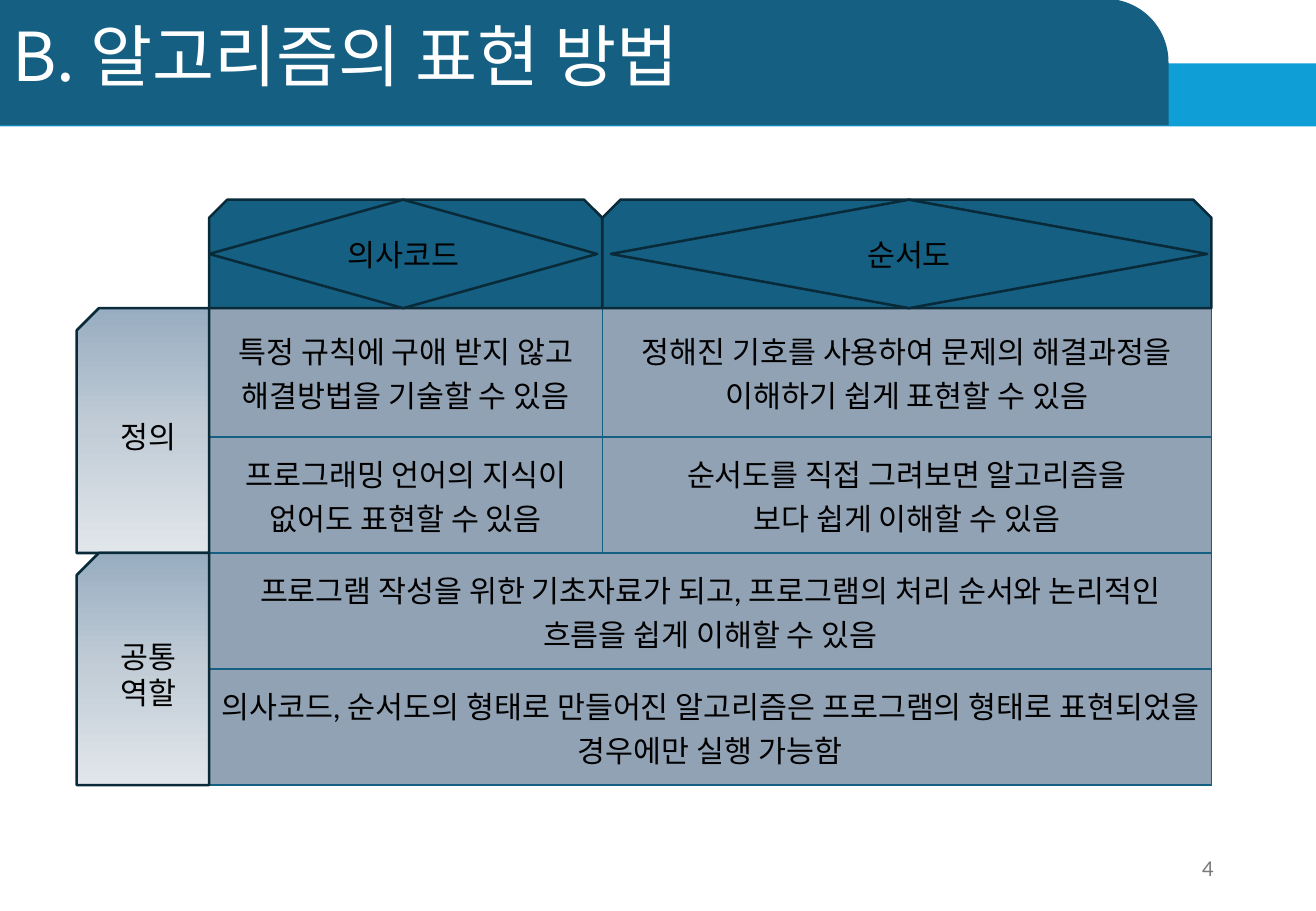
"""Build the slide comparing pseudocode and flowcharts."""
from copy import deepcopy
from pptx import Presentation
from pptx import oxml
from pptx.dml.color import RGBColor
from pptx.enum import shapes, text
from pptx.oxml import ns
from pptx.util import Pt

TITLE = "B. 알고리즘의 표현 방법"
PAGE = "4"
HEADS = [("의사코드", 0, 230), ("순서도", 5, 353.5)]
SIDES = [["정의"], ["공통", "역할"]]
ROWS = [
    [["특정 규칙에 구애 받지 않고 해결방법을 기술할 수 있음"],
     ["정해진 기호를 사용하여 문제의 해결과정을 이해하기 쉽게 표현할 수 있음"]],
    [["프로그래밍 언어의 지식이 없어도 표현할 수 있음"],
     ["순서도를 직접 그려보면 알고리즘을", "보다 쉽게 이해할 수 있음"]],
    [["프로그램 작성을 위한 기초자료가 되고, 프로그램의 처리 순서와 논리적인 흐름을 쉽게 이해할 수 있음"]],
    [["의사코드, 순서도의 형태로 만들어진 알고리즘은 프로그램의 형태로 표현되었을 경우에만 실행 가능함"]],
]
BLUE, SKY, EDGE, CELL = "156082", "0F9ED5", "092A39", "92A2B5"
GRADIENT = [(0, "98ADC1"), (0.5, "C2CDD7"), (1, "E1E6EB")]
KOREAN, LATIN = "Noto Sans CJK KR", "Lato"
WIDTH, HEIGHT = 780, 540
LEFT, TOP, HEAD_H, SIDE_W = 124, 182.7, 64.3, 78.5
COLS = [233, 361]
HEIGHTS = [76.3, 68.8, 68.8, 68.8]
SHAPE = shapes.MSO_SHAPE
ALIGN = text.PP_ALIGN


def rgb(value):
    return RGBColor.from_string(value)


def write(tf, lines, size=18, font=KOREAN, color="000000", align=ALIGN.CENTER):
    tf.word_wrap = True
    tf.vertical_anchor = text.MSO_ANCHOR.MIDDLE
    for i, line in enumerate(lines):
        p = tf.paragraphs[0] if i == 0 else tf.add_paragraph()
        p.alignment = align
        r = p.add_run()
        r.text = line
        for name, value in {"size": Pt(size), "name": font}.items():
            setattr(r.font, name, value)
        r.font.color.rgb = rgb(color)
        if font == KOREAN:
            ea = oxml.parse_xml(f'<a:ea {ns.nsdecls("a")} typeface="{font}"/>')
            r.font._element.append(ea)


def add(s, kind, box, fill=BLUE, line=None):
    sp = s.shapes.add_shape(kind, *map(Pt, box))
    sp.shadow.inherit = False
    sp.fill.solid()
    sp.fill.fore_color.rgb = rgb(fill)
    if line:
        sp.line.color.rgb = rgb(line)
        sp.line.width = Pt(1.5)
    else:
        sp.line.fill.background()
    return sp


def shade(sp):
    sp.fill.gradient()
    sp.fill.gradient_angle = 270
    first = sp.fill.gradient_stops[0]._gs
    first.addnext(deepcopy(first))
    for stop, (position, color) in zip(sp.fill.gradient_stops, GRADIENT):
        stop.position = position
        stop.color.rgb = rgb(color)


def style_cell(cell):
    tcPr = cell._tc.get_or_add_tcPr()
    for side in ("lnL", "lnR", "lnT", "lnB"):
        tcPr.append(oxml.parse_xml(
            f'<a:{side} {ns.nsdecls("a")} w="12700"><a:solidFill>'
            f'<a:srgbClr val="{BLUE}"/></a:solidFill></a:{side}>'))
    cell.fill.solid()
    cell.fill.fore_color.rgb = rgb(CELL)


def add_title(s):
    add(s, SHAPE.RECTANGLE, (0, 37.5, WIDTH, 37.5), SKY)
    add(s, SHAPE.ROUND_1_RECTANGLE, (0, -0.7, 692.6, 75)).adjustments[0] = 0.5
    title = s.shapes.title
    s.shapes._spTree.append(title._element)
    box = {"left": 0, "top": -1.4, "width": WIDTH, "height": 73.4}
    for name, value in box.items():
        setattr(title, name, Pt(value))
    write(title.text_frame, [TITLE], 40, KOREAN, "FFFFFF", ALIGN.LEFT)
    title.text_frame.paragraphs[0].line_spacing = 0.9


def add_grid(s):
    frame = s.shapes.add_table(len(ROWS), len(COLS), Pt(LEFT), Pt(TOP),
                               Pt(sum(COLS)), Pt(sum(HEIGHTS)))
    table = frame.table
    table.first_row = table.horz_banding = False
    for column, width in zip(table.columns, COLS):
        column.width = Pt(width)
    for i, (height, row) in enumerate(zip(HEIGHTS, ROWS)):
        table.rows[i].height = Pt(height)
        for j in range(len(COLS)):
            style_cell(table.cell(i, j))
        if len(row) == 1:
            table.cell(i, 0).merge(table.cell(i, 1))
        for j, lines in enumerate(row):
            cell = table.cell(i, j)
            write(cell.text_frame, lines, font=LATIN)
            cell.vertical_anchor = text.MSO_ANCHOR.MIDDLE


def add_heads(s):
    x, y = LEFT, TOP - HEAD_H
    for (label, shift, diamond_w), width in zip(HEADS, COLS):
        add(s, SHAPE.SNIP_2_SAME_RECTANGLE, (x, y, width, HEAD_H), line=EDGE)
        sp = add(s, SHAPE.DIAMOND, (x + shift, y, diamond_w, HEAD_H), line=EDGE)
        write(sp.text_frame, [label])
        x += width


def add_sides(s):
    y = TOP
    for i, lines in enumerate(SIDES):
        height = sum(HEIGHTS[2 * i:2 * i + 2])
        sp = add(s, SHAPE.SNIP_1_RECTANGLE, (LEFT - SIDE_W, y, SIDE_W, height), line=EDGE)
        sp._element.spPr.xfrm.set("flipH", "1")
        shade(sp)
        write(sp.text_frame, lines)
        y += height


def main():
    prs = Presentation()
    prs.slide_width, prs.slide_height = Pt(WIDTH), Pt(HEIGHT)
    s = prs.slides.add_slide(prs.slide_layouts[5])
    add_title(s)
    page = s.shapes.add_textbox(Pt(551), Pt(500.5), Pt(175.5), Pt(28.8))
    write(page.text_frame, [PAGE], 12, LATIN, "797979", ALIGN.RIGHT)
    add_grid(s)
    add_heads(s)
    add_sides(s)
    prs.save("out.pptx")


if __name__ == "__main__":
    main()
